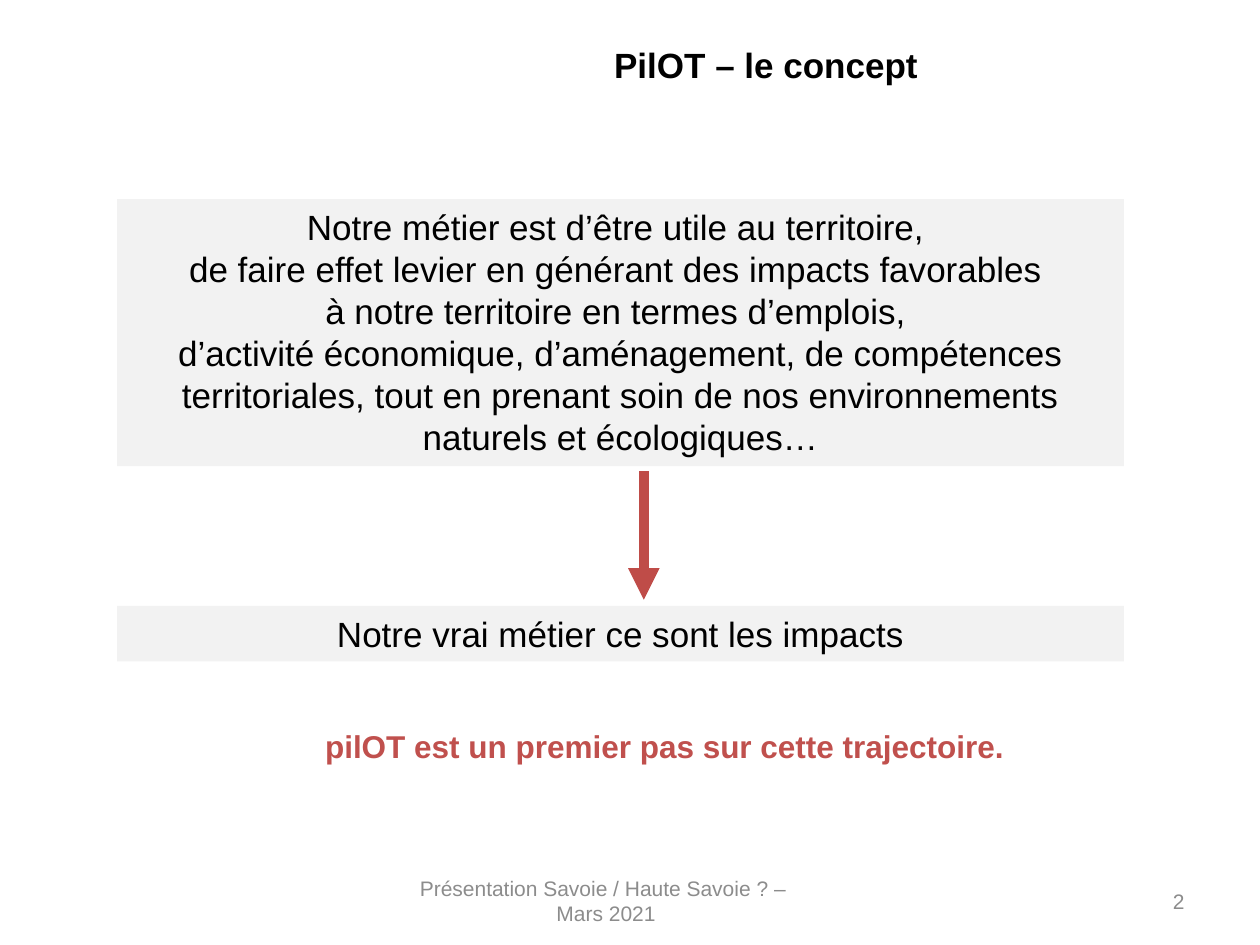
"""Build the PilOT concept slide."""
import pptx
import pptx.util
import pptx.dml.color
import pptx.enum.shapes
import pptx.enum.text
import pptx.oxml.ns
import lxml.etree

Pt = pptx.util.Pt
RGB = pptx.dml.color.RGBColor.from_string
ALIGN = pptx.enum.text.PP_ALIGN
ANCHOR = pptx.enum.text.MSO_ANCHOR
COLORS = {"ink": "000000", "gray": "8C8C8C", "panel": "F2F2F2",
          "red": "C0504D", "arrow": "BF4C48"}

deck = pptx.Presentation()
deck.slide_width, deck.slide_height = Pt(720), Pt(540)
slide = deck.slides.add_slide(deck.slide_layouts[6])
shapes = slide.shapes


def write(shape, text, size, color, bold=False, align=ALIGN.CENTER, anchor=ANCHOR.TOP):
    frame = shape.text_frame
    frame.word_wrap = True
    frame.vertical_anchor = anchor
    frame.text = text
    for para in frame.paragraphs:
        para.alignment = align
        for run in para.runs:
            run.font.name = "Arial"
            run.font.size = Pt(size)
            run.font.bold = bold
            run.font.color.rgb = RGB(COLORS[color])


footer = shapes.add_textbox(Pt(194.4), Pt(500.4), Pt(303.84), Pt(28.8))
write(footer, "Présentation Savoie / Haute Savoie ? – \nMars 2021", 12, "gray",
      anchor=ANCHOR.MIDDLE)

number = shapes.add_textbox(Pt(516.24), Pt(500.4), Pt(167.76), Pt(28.8))
write(number, "2", 12, "gray", align=ALIGN.RIGHT, anchor=ANCHOR.MIDDLE)

title = shapes.add_textbox(Pt(192.24), Pt(21.6), Pt(491.04), Pt(40.32))
write(title, "PilOT – le concept", 20, "ink", bold=True)

panels = [
    (113.76, 152.64,
     "Notre métier est d’être utile au territoire, \v"
     "de faire effet levier en générant des impacts favorables \n"
     "à notre territoire en termes d’emplois, \n"
     "d’activité économique, d’aménagement, de compétences territoriales, "
     "tout en prenant soin de nos environnements naturels et écologiques…"),
    (346.32, 31.68, "Notre vrai métier ce sont les impacts"),
]
for top, height, text in panels:
    panel = shapes.add_shape(pptx.enum.shapes.MSO_SHAPE.RECTANGLE,
                             Pt(66.96), Pt(top), Pt(575.28), Pt(height))
    panel.shadow.inherit = False
    panel.fill.solid()
    panel.fill.fore_color.rgb = RGB(COLORS["panel"])
    panel.line.fill.background()
    write(panel, text, 20, "ink")

arrow = shapes.add_connector(pptx.enum.shapes.MSO_CONNECTOR.STRAIGHT,
                             Pt(367.92), Pt(269.28), Pt(367.92), Pt(342.72))
arrow.line.color.rgb = RGB(COLORS["arrow"])
arrow.line.width = Pt(6)
qn = pptx.oxml.ns.qn
lxml.etree.SubElement(arrow.line._get_or_add_ln(), qn("a:tailEnd"), type="triangle")
lxml.etree.SubElement(arrow._element.spPr, qn("a:effectLst"))

closing = shapes.add_textbox(Pt(36), Pt(411.84), Pt(692.64), Pt(28.8))
write(closing, "pilOT est un premier pas sur cette trajectoire. ", 18, "red", bold=True)

deck.save("out.pptx")
